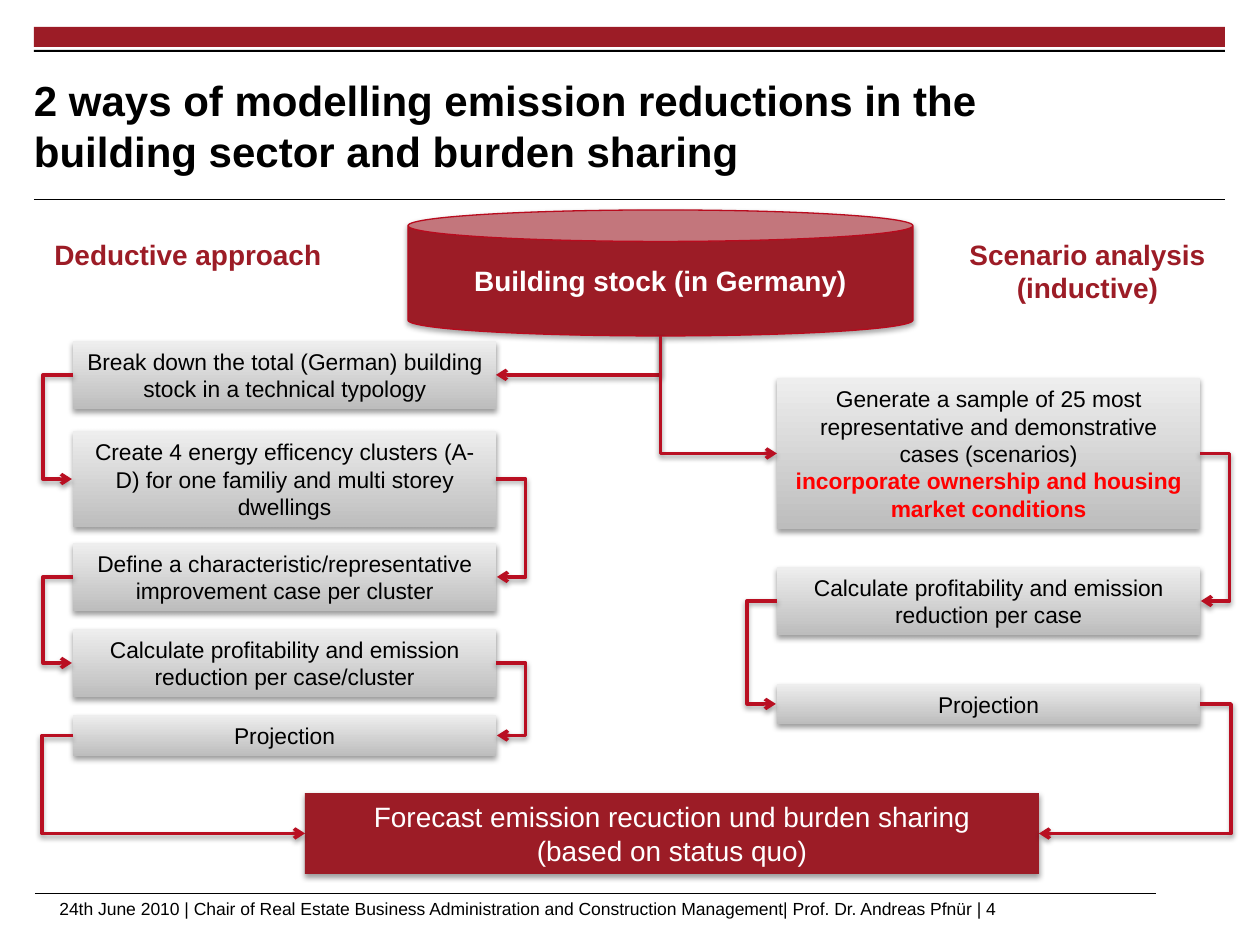
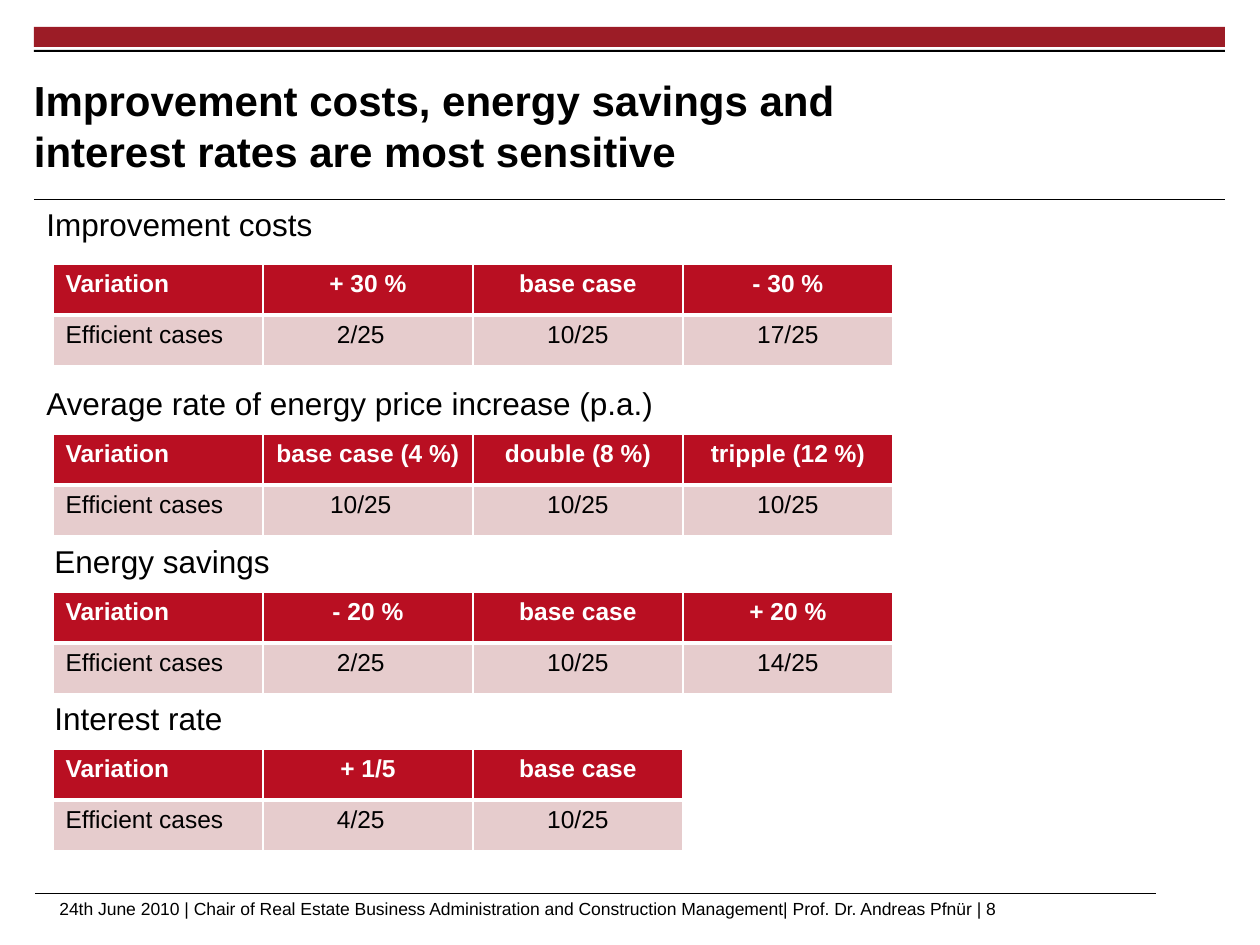
import pptx
import pptx.util
import pptx.dml.color
import pptx.enum.shapes
import pptx.enum.text
import pptx.oxml.ns
from lxml import etree

SCALE = 914400 / 126
MAROON, RED, PINK = "9C1C26", "B90F22", "E6CCCD"
BLACK, WHITE, ALERT = "000000", "FFFFFF", "FF0000"
LEFT, BOTTOM, RIGHT = 1, 2, 3
RECT = pptx.enum.shapes.MSO_SHAPE.RECTANGLE
CAN = pptx.enum.shapes.MSO_SHAPE.CAN
MIDDLE = pptx.enum.text.MSO_ANCHOR.MIDDLE
CENTER = pptx.enum.text.PP_ALIGN.CENTER
START = pptx.enum.text.PP_ALIGN.LEFT
FOOTER = ("24th June 2010 | Chair of Real Estate Business Administration and "
          "Construction Management| Prof. Dr. Andreas Pfnür | {}")

DEDUCTIVE_STEPS = [
    (0, 68, "Break down the total (German) building stock in a technical typology"),
    (90, 96, "Create 4 energy efficency clusters (A-D) for one familiy and multi storey dwellings"),
    (202, 68, "Define a characteristic/representative improvement case per cluster"),
    (288, 68, "Calculate profitability and emission reduction per case/cluster"),
    (374, 41, "Projection"),
]
SCENARIO_STEPS = [
    (0, 151, "Generate a sample of 25 most representative and demonstrative cases (scenarios)"),
    (189, 68, "Calculate profitability and emission reduction per case"),
    (306, 40, "Projection"),
]
SENSITIVITIES = [
    (34, 199, 264, "Improvement costs",
     ["+ 30 %", "base case", "- 30 %"], ["2/25", "10/25", "17/25"]),
    (34, 378, 434, "Average rate of energy price increase (p.a.)",
     ["base case (4 %)", "double (8 %)", "tripple (12 %)"], ["10/25", "10/25", "10/25"]),
    (42, 536, 592, "Energy savings",
     ["- 20 %", "base case", "+ 20 %"], ["2/25", "10/25", "14/25"]),
    (42, 693, 749, "Interest rate", ["+ 1/5", "base case"], ["4/25", "10/25"]),
]


def px(n):
    """Turn px into EMU."""
    return pptx.util.Emu(round(n * SCALE))


def rgb(color):
    """Turn a hex string into a colour."""
    return pptx.dml.color.RGBColor.from_string(color)


def child(parent, tag, **attrs):
    """Append a DrawingML element."""
    return etree.SubElement(parent, pptx.oxml.ns.qn("a:" + tag), attrs)


def write(tf, text, size=13, color=BLACK, bold=False, align=CENTER):
    """Add formatted lines, one paragraph each, to a text frame."""
    for line in text.splitlines():
        p = tf.paragraphs[0] if not tf.text else tf.add_paragraph()
        p.alignment = align
        r = p.add_run()
        r.text = line
        r.font.name, r.font.size, r.font.bold = "Arial", pptx.util.Pt(size), bold
        r.font.color.rgb = rgb(color)


def text_box(slide, box, text, wrap=True, **fmt):
    """Place a text box."""
    tf = slide.shapes.add_textbox(*map(px, box)).text_frame
    tf.word_wrap = wrap
    write(tf, text, **fmt)


def add_shadow(sp, alpha=38):
    """Give a shape or connector a soft shadow below it."""
    props = sp._element.spPr
    effects = props.find(pptx.oxml.ns.qn("a:effectLst"))
    if effects is None:
        effects = child(props, "effectLst")
    shadow = child(effects, "outerShdw", blurRad="39370", dist="20320",
                   dir="5400000", rotWithShape="0")
    child(child(shadow, "srgbClr", val=BLACK), "alpha", val=str(alpha * 1000))


def shape(slide, kind, box, fill, line=None):
    """Place a preset shape; a pair of colours makes an upward gradient."""
    sp = slide.shapes.add_shape(kind, *map(px, box))
    if isinstance(fill, tuple):
        sp.fill.gradient()
        sp.fill.gradient_angle = 90
        for stop, color in zip(sp.fill.gradient_stops, fill):
            stop.color.rgb = rgb(color)
    else:
        sp.fill.solid()
        sp.fill.fore_color.rgb = rgb(fill)
    if line:
        sp.line.color.rgb = rgb(line)
        sp.line.width = pptx.util.Pt(0.75)
    else:
        sp.line.fill.background()
    sp.shadow.inherit = False
    sp.text_frame.word_wrap = True
    sp.text_frame.vertical_anchor = MIDDLE
    return sp


def connector(slide, kind, ends, color, width):
    """Draw a connector between two points."""
    c = slide.shapes.add_connector(kind, *map(px, ends))
    c.line.color.rgb = rgb(color)
    c.line.width = pptx.util.Pt(width)
    return c


def elbow(slide, start, start_site, end, end_site, via=None):
    """Join two shapes by an arrow that bends at the horizontal place via."""
    c = connector(slide, pptx.enum.shapes.MSO_CONNECTOR.ELBOW, (0, 0, 9, 9), RED, 2)
    c.begin_connect(start, start_site)
    c.end_connect(end, end_site)
    if c.end_x == c.begin_x:
        c.end_x += px(1 if start_site == RIGHT else -1)
    ratio = (px(via) - c.begin_x) / (c.end_x - c.begin_x)
    guides = c._element.spPr.prstGeom.get_or_add_avLst()
    child(guides, "gd", name="adj1", fmla=f"val {round(ratio * 100000)}")
    child(c.line._get_or_add_ln(), "tailEnd", type="arrow")
    add_shadow(c)


def branch(slide, step, site, stock):
    """Lead an arrow from the bottom of the stock to the side of a step."""
    c = connector(slide, pptx.enum.shapes.MSO_CONNECTOR.ELBOW, (0, 0, 9, 9), RED, 2)
    c.begin_connect(step, site)
    c.end_x, c.end_y = stock.left + stock.width // 2, stock.top + stock.height
    c._element.spPr.prstGeom.set("prst", "bentConnector2")
    child(c.line._get_or_add_ln(), "headEnd", type="arrow")
    add_shadow(c)


def base_slide(prs, title, number):
    """Add a slide with the shared bands, rules, title and footer."""
    slide = prs.slides.add_slide(prs.slide_layouts[5])
    shape(slide, RECT, (34, 27, 1191, 20), MAROON)
    shape(slide, RECT, (34, 50, 1191, 2), BLACK)
    for ends in ((34, 200, 1225, 200), (35, 894, 1156, 894)):
        rule = connector(slide, pptx.enum.shapes.MSO_CONNECTOR.STRAIGHT, ends, BLACK, 0.6)
        child(rule._element.spPr, "effectLst")
    head = slide.shapes.title
    head.left, head.top, head.width, head.height = map(px, (34, 67, 948, 116))
    tf = head.text_frame
    tf.margin_left = tf.margin_right = tf.margin_top = tf.margin_bottom = 0
    tf.word_wrap, tf.vertical_anchor = True, MIDDLE
    write(tf, title, size=24, bold=True, align=START)
    text_box(slide, (47, 892, 1176, 32), FOOTER.format(number), size=10, align=START)
    return slide


def step_column(slide, box, steps, side):
    """Stack grey steps in a box, linked by arrows on alternating sides."""
    x, y, w = box
    column = []
    for top, height, text in steps:
        sp = shape(slide, RECT, (x, y + top, w, height), ("BDBDBD", "EEEEEE"))
        add_shadow(sp)
        write(sp.text_frame, text)
        column.append(sp)
    for start, end in zip(column, column[1:]):
        elbow(slide, start, side, end, side, x - 30 if side == LEFT else x + w + 30)
        side = LEFT + RIGHT - side
    return column


def approaches_slide(prs):
    """Build the slide that compares the two modelling approaches."""
    slide = base_slide(prs, "2 ways of modelling emission reductions in the "
                       "building sector and burden sharing", 4)
    heading = dict(size=16, color=MAROON, bold=True)
    text_box(slide, (42, 231, 325, 47), "Deductive approach", align=START, **heading)
    text_box(slide, (935, 231, 305, 81), "Scenario analysis (inductive)", **heading)
    stock = shape(slide, CAN, (408, 210, 505, 126), MAROON, "B90B1E")
    add_shadow(stock, 35)
    write(stock.text_frame, "Building stock (in Germany)", size=16, color=WHITE, bold=True)
    deductive = step_column(slide, (73, 341, 423), DEDUCTIVE_STEPS, LEFT)
    scenario = step_column(slide, (777, 378, 423), SCENARIO_STEPS, RIGHT)
    write(scenario[0].text_frame, "incorporate ownership and housing market conditions",
          color=ALERT, bold=True)
    forecast = shape(slide, RECT, (305, 793, 734, 81), MAROON)
    add_shadow(forecast)
    write(forecast.text_frame, "Forecast emission recuction und burden sharing\n"
          "(based on status quo)", size=16, color=WHITE)
    branch(slide, deductive[0], RIGHT, stock)
    branch(slide, scenario[0], LEFT, stock)
    elbow(slide, deductive[-1], LEFT, forecast, LEFT, 42)
    elbow(slide, scenario[-1], RIGHT, forecast, RIGHT, 1231)


def format_cell(cell, text, fill, edges, **fmt):
    """Set the borders, fill and text of a table cell."""
    props = cell._tc.get_or_add_tcPr()
    for side, width in zip("LRTB", edges):
        ln = child(props, "ln" + side, w=str(pptx.util.Pt(width)))
        child(child(ln, "solidFill"), "srgbClr", val=WHITE)
    cell.fill.solid()
    cell.fill.fore_color.rgb = rgb(fill)
    write(cell.text_frame, text, size=14, **fmt)


def variation_table(slide, x, y, variations, results):
    """Place a two-row table of variations and efficient cases."""
    rows = [["Variation"] + variations, ["Efficient cases"] + results]
    n = len(rows[0])
    table = slide.shapes.add_table(2, n, px(x), px(y), px(210 * n), px(102)).table
    for j in range(n):
        align = CENTER if j else START
        format_cell(table.cell(0, j), rows[0][j], RED, (1, 1, 1, 3),
                    color=WHITE, bold=True, align=align)
        format_cell(table.cell(1, j), rows[1][j], PINK, (1, 1, 3, 1), align=align)
    table.cell(1, 1).margin_right = px(27)


def sensitivity_slide(prs):
    """Build the slide with the four sensitivity tables."""
    slide = base_slide(prs, "Improvement costs, energy savings and "
                       "interest rates are most sensitive", 8)
    for x, top, table_top, name, variations, results in SENSITIVITIES:
        text_box(slide, (x, top, 640, 50), name, wrap=False, size=18, align=START)
        variation_table(slide, 53, table_top, variations, results)


def main():
    """Build and save the presentation."""
    prs = pptx.Presentation()
    prs.slide_width, prs.slide_height = px(1260), px(945)
    approaches_slide(prs)
    sensitivity_slide(prs)
    prs.save("out.pptx")


if __name__ == "__main__":
    main()
